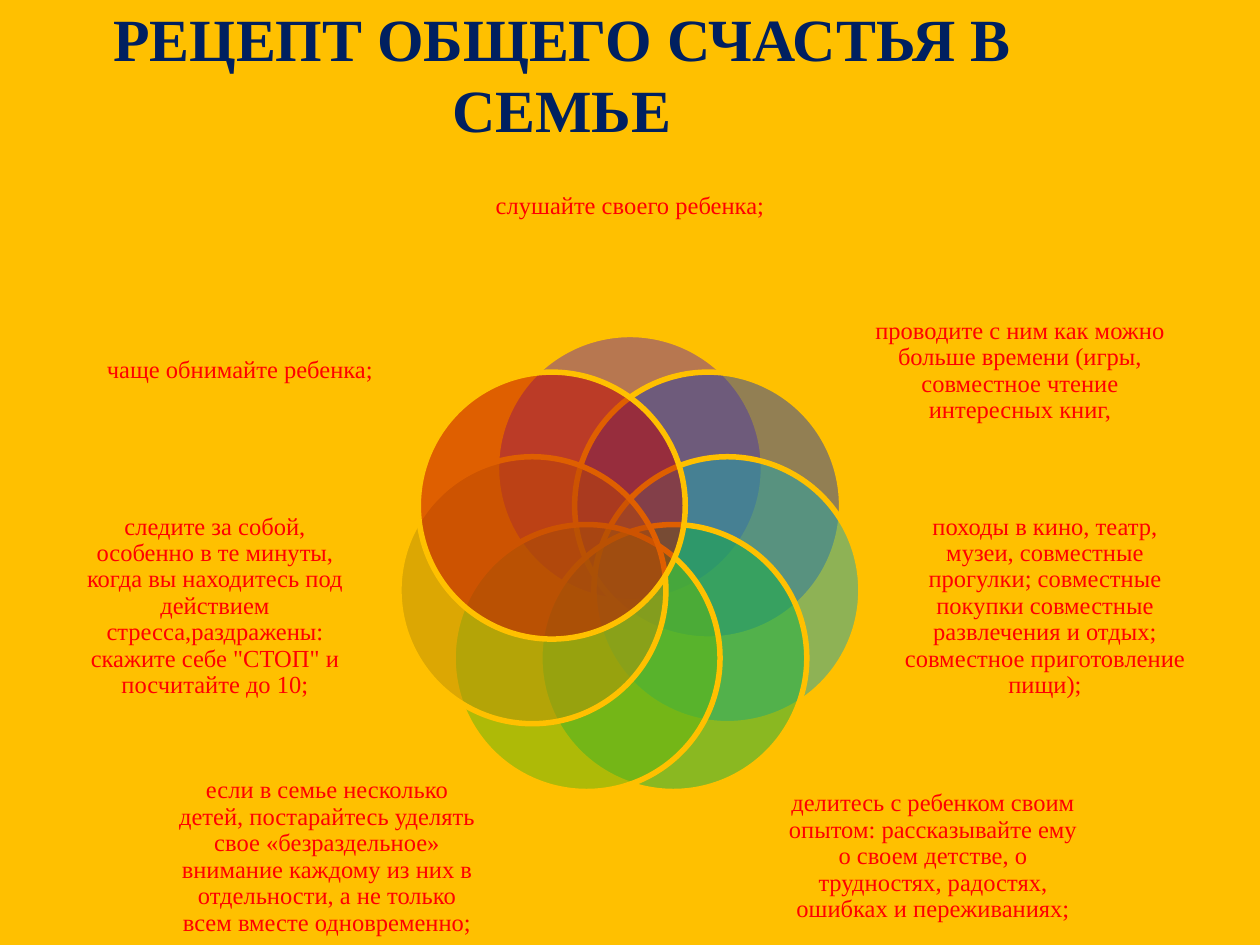
"""Build the slide with seven rules of family happiness around a ring of circles."""
from dataclasses import dataclass
from math import cos, pi, sin

from lxml.etree import SubElement
from pptx import Presentation
from pptx.dml.color import RGBColor
from pptx.enum.shapes import MSO_SHAPE
from pptx.enum.text import MSO_ANCHOR, MSO_AUTO_SIZE, PP_ALIGN
from pptx.oxml import parse_xml
from pptx.oxml.ns import nsdecls, qn
from pptx.util import Emu, Pt

EMU_PER_PX = 914400 / 126
SLIDE_SIZE = (1260, 945)
TITLE = "РЕЦЕПТ ОБЩЕГО СЧАСТЬЯ В СЕМЬЕ"
RING_CENTRE = (630, 568)
RING_RADIUS = 100
CIRCLE_SIZE = 267

TOP_BOX = (477, 125, 306, 164)
RIGHT_BOXES = [(875, 281, 290, 180), (903, 510, 284, 193), (780, 769, 306, 176)]
LEFT_BOXES = [
    (SLIDE_SIZE[0] - left - width, top, width, height)
    for left, top, width, height in reversed(RIGHT_BOXES)
]

RULES = [
    ("7030A0", "слушайте своего ребенка;"),
    ("2740A6", "проводите с ним как можно больше времени (игры, "
               "совместное чтение интересных книг,"),
    ("1FA5AB", "походы в кино, театр, музеи, совместные прогулки; совместные "
               "покупки совместные развлечения и отдых; совместное "
               "приготовление пищи);"),
    ("17B143", "делитесь с ребенком своим опытом: рассказывайте ему о своем "
               "детстве, о трудностях, радостях, ошибках и переживаниях;"),
    ("5FB60F", "если в семье несколько детей, постарайтесь уделять свое "
               "«безраздельное» внимание каждому из них в отдельности, а не "
               "только всем вместе одновременно;"),
    ("BB9007", "следите за собой, особенно в те минуты, когда вы находитесь "
               "под действием стресса,раздражены: скажите себе \"CТОП\" и "
               "посчитайте до 10;"),
    ("C00000", "чаще обнимайте ребенка;"),
]


@dataclass(frozen=True)
class Theme:
    """Colours, font and sizes of the slide."""
    font: str = "Times New Roman"
    background: str = "FFC000"
    title: str = "002060"
    title_outline: str = "7F7F00"
    rule: str = "FF0000"
    title_size: float = 34.2
    rule_size: float = 14
    circle_line: float = 3.15
    circle_opacity: int = 50


def px(length):
    """Turn pixels into EMU."""
    return Emu(round(length * EMU_PER_PX))


def write(frame, text, *, size, colour, font, bold=False, spacing=1.0,
          anchor=MSO_ANCHOR.MIDDLE, side_inset=0):
    """Put one centred, wrapped paragraph into a text frame and return its run."""
    frame.word_wrap = True
    frame.auto_size = MSO_AUTO_SIZE.NONE
    frame.vertical_anchor = anchor
    frame.margin_left = frame.margin_right = px(side_inset)
    frame.margin_top = frame.margin_bottom = 0
    paragraph = frame.paragraphs[0]
    paragraph.alignment = PP_ALIGN.CENTER
    paragraph.line_spacing = spacing
    run = paragraph.add_run()
    run.text = text
    run.font.name = font
    run.font.size = Pt(size)
    run.font.bold = bold
    run.font.color.rgb = RGBColor.from_string(colour)
    return run


class SlideBuilder:
    """Holds the theme and the current slide."""

    def __init__(self, deck, theme):
        """Add a title-only slide with the theme background."""
        self.theme = theme
        self.slide = deck.slides.add_slide(deck.slide_layouts[5])
        background = self.slide.background.fill
        background.solid()
        background.fore_color.rgb = RGBColor.from_string(theme.background)

    def title(self, text, box):
        """Place the heading with its hairline outline."""
        heading = self.slide.shapes.title
        heading.left, heading.top, heading.width, heading.height = map(px, box)
        run = write(heading.text_frame, text, size=self.theme.title_size,
                    colour=self.theme.title, font=self.theme.font, bold=True,
                    anchor=MSO_ANCHOR.BOTTOM, side_inset=6)
        outline = parse_xml(
            f'<a:ln {nsdecls("a")} w="{Pt(0.04)}"><a:solidFill>'
            f'<a:srgbClr val="{self.theme.title_outline}"/></a:solidFill></a:ln>')
        run.font._element.insert(0, outline)

    def circle(self, centre_x, centre_y, size, colour):
        """Draw a translucent circle around a centre."""
        petal = self.slide.shapes.add_shape(
            MSO_SHAPE.OVAL, px(centre_x - size / 2), px(centre_y - size / 2),
            px(size), px(size))
        petal.shadow.inherit = False
        petal.fill.solid()
        petal.fill.fore_color.rgb = RGBColor.from_string(colour)
        tint = petal.fill._xPr.find(qn("a:solidFill"))[0]
        SubElement(tint, qn("a:alpha"), val=str(self.theme.circle_opacity * 1000))
        petal.line.color.rgb = RGBColor.from_string(self.theme.background)
        petal.line.width = Pt(self.theme.circle_line)

    def rule(self, text, box):
        """Write one rule in its box."""
        label = self.slide.shapes.add_textbox(*map(px, box))
        write(label.text_frame, text, size=self.theme.rule_size,
              colour=self.theme.rule, font=self.theme.font, spacing=0.9)


def main():
    """Build and save the deck."""
    deck = Presentation()
    deck.slide_width, deck.slide_height = map(px, SLIDE_SIZE)
    builder = SlideBuilder(deck, Theme())
    builder.title(TITLE, (63, 44, 998, 101))
    centre_x, centre_y = RING_CENTRE
    boxes = [TOP_BOX, *RIGHT_BOXES, *LEFT_BOXES]
    for index, ((colour, text), box) in enumerate(zip(RULES, boxes)):
        angle = 2 * pi * index / len(RULES)
        builder.circle(centre_x + RING_RADIUS * sin(angle),
                       centre_y - RING_RADIUS * cos(angle), CIRCLE_SIZE, colour)
        builder.rule(text, box)
    deck.save("out.pptx")


if __name__ == "__main__":
    main()
